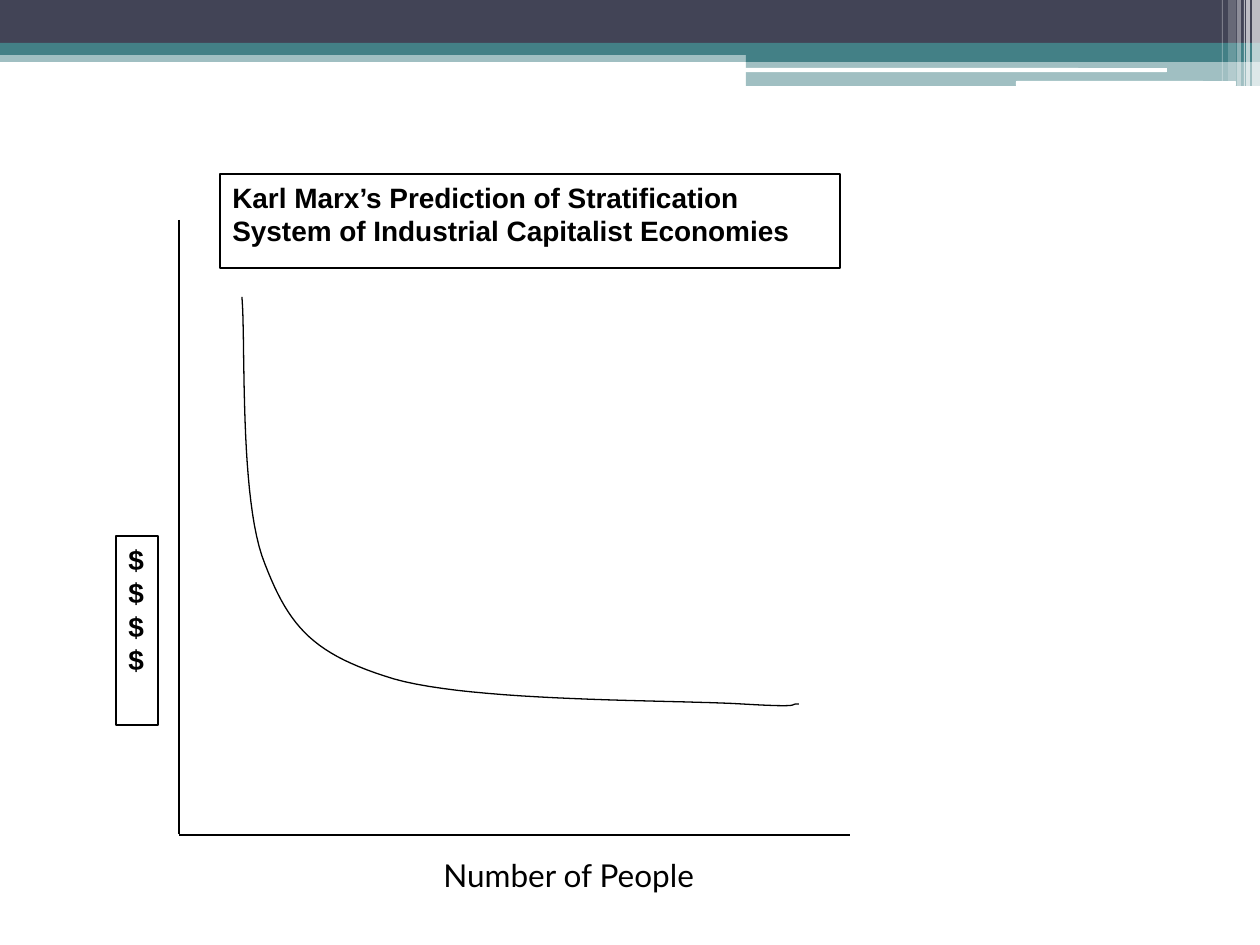
from typing import NamedTuple

from lxml import etree
from pptx import Presentation
from pptx.dml.color import RGBColor
from pptx.enum import shapes, text
from pptx.oxml.ns import qn
from pptx.util import Emu, Pt

PX = 914400 / 126  # EMU per px
BLACK, WHITE, TEAL, SLATE = "000000", "FFFFFF", "438086", "424456"
RECT = shapes.MSO_SHAPE.RECTANGLE
ROUND = shapes.MSO_SHAPE.ROUNDED_RECTANGLE


class Band(NamedTuple):
    left: int
    top: int
    width: int
    height: int
    color: str
    opacity: int = 100
    kind: shapes.MSO_SHAPE = RECT


class Axis(NamedTuple):
    x1: int
    y1: int
    x2: int
    y2: int


class Label(NamedTuple):
    left: int
    top: int
    width: int
    height: int
    words: str


BANDS = [
    Band(0, 50, 1260, 12, TEAL, 50),
    Band(0, 0, 1260, 43, SLATE),
    Band(0, 43, 1260, 12, TEAL),
    Band(746, 49, 514, 13, TEAL),
    Band(746, 61, 514, 25, TEAL, 50),
    Band(745, 68, 422, 4, WHITE, kind=ROUND),
    Band(1016, 81, 220, 5, WHITE, kind=ROUND),
    # Pale stripes in the corner
    Band(1252, 0, 8, 86, WHITE, 65),
    Band(1246, 0, 4, 86, WHITE, 65),
    Band(1244, 0, 1, 86, WHITE, 60),
    Band(1237, 0, 4, 86, WHITE, 40),
    Band(1228, 0, 8, 81, WHITE, 20),
    Band(1222, 0, 1, 81, WHITE, 30),
]
AXES = [Axis(179, 220, 179, 834), Axis(179, 835, 850, 835)]
BOXES = [
    Label(220, 174, 620, 94, "Karl Marx’s Prediction of Stratification "
          "System of Industrial Capitalist Economies"),
    Label(116, 536, 42, 189, "$$$$"),
]
PEOPLE = Label(431, 850, 441, 50, "Number of People")

# Wealth curve: start point, then (control, control, end) of each cubic
CURVE_START = (242, 297)
CURVE = [
    ((246, 341), (239, 501), (265, 564)),
    ((290, 629), (315, 655), (394, 679)),
    ((474, 702), (674, 700), (741, 704)),
    ((809, 708), (786, 704), (799, 704)),
]
STEPS = 24


def px(*lengths: float) -> list[Emu]:
    return [Emu(round(length * PX)) for length in lengths]


def rgb(color: str) -> RGBColor:
    return RGBColor.from_string(color)


def outline(shape) -> None:
    shape.line.color.rgb = rgb(BLACK)
    shape.line.width = Pt(0.75)


def draw_band(slide, band: Band):
    shape = slide.shapes.add_shape(band.kind, *px(*band[:4]))
    shape.shadow.inherit = False
    shape.fill.solid()
    shape.fill.fore_color.rgb = rgb(band.color)
    shape.line.fill.background()
    if band.opacity < 100:
        color = shape.fill._xPr.find(".//" + qn("a:srgbClr"))
        etree.SubElement(color, qn("a:alpha"), val=str(band.opacity * 1000))
    return shape


def draw_axis(slide, axis: Axis) -> None:
    line = slide.shapes.add_connector(shapes.MSO_CONNECTOR.STRAIGHT, *px(*axis))
    outline(line)
    etree.SubElement(line._element.spPr, qn("a:effectLst"))


def draw_curve(slide) -> None:
    points, start = [], CURVE_START
    for control1, control2, end in CURVE:
        for step in range(1, STEPS + 1):
            t = step / STEPS
            points.append(px(*(
                (1 - t) ** 3 * a + 3 * (1 - t) ** 2 * t * b
                + 3 * (1 - t) * t ** 2 * c + t ** 3 * d
                for a, b, c, d in zip(start, control1, control2, end))))
        start = end
    builder = slide.shapes.build_freeform(*px(*CURVE_START))
    builder.add_line_segments(points, close=False)
    curve = builder.convert_to_shape()
    curve.shadow.inherit = False
    curve.fill.background()
    outline(curve)


def write(shape, words: str, *, font: str, size: int, bold: bool = False) -> None:
    frame = shape.text_frame
    frame.word_wrap = True
    frame.vertical_anchor = text.MSO_ANCHOR.TOP
    paragraph = frame.paragraphs[0]
    paragraph.alignment = text.PP_ALIGN.LEFT
    run = paragraph.add_run()
    run.text = words
    run.font.name = font
    run.font.size = Pt(size)
    run.font.bold = bold
    run.font.color.rgb = rgb(BLACK)


def main() -> None:
    deck = Presentation()
    deck.slide_width, deck.slide_height = px(1260, 945)
    slide = deck.slides.add_slide(deck.slide_layouts[6])

    # Header decoration
    for band in BANDS:
        draw_band(slide, band)

    # Axes and curve
    for axis in AXES:
        draw_axis(slide, axis)
    draw_curve(slide)

    # Framed title and money label, then the plain axis caption
    for label in BOXES:
        box = draw_band(slide, Band(*label[:4], WHITE))
        outline(box)
        write(box, label.words, font="Arial", size=16, bold=True)
    caption = slide.shapes.add_textbox(*px(*PEOPLE[:4]))
    write(caption, PEOPLE.words, font="Lato", size=18)

    deck.save("out.pptx")


if __name__ == "__main__":
    main()
